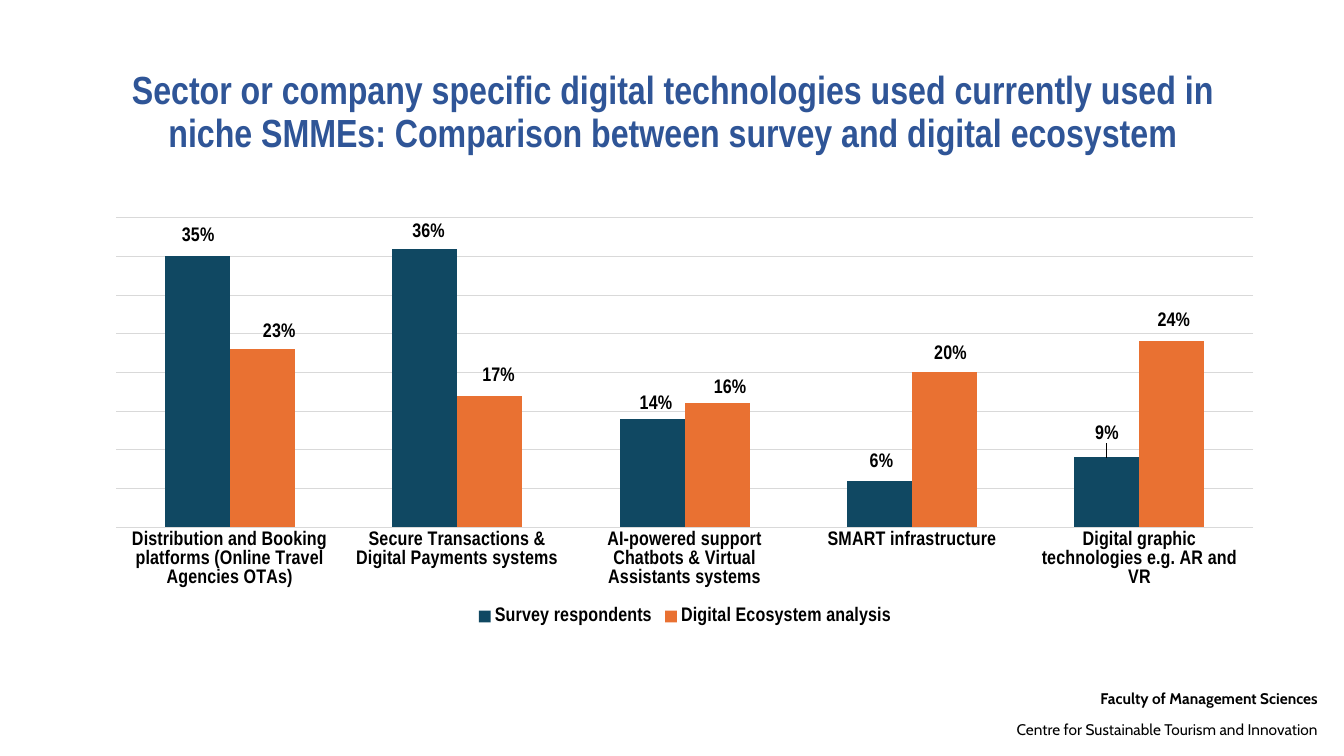
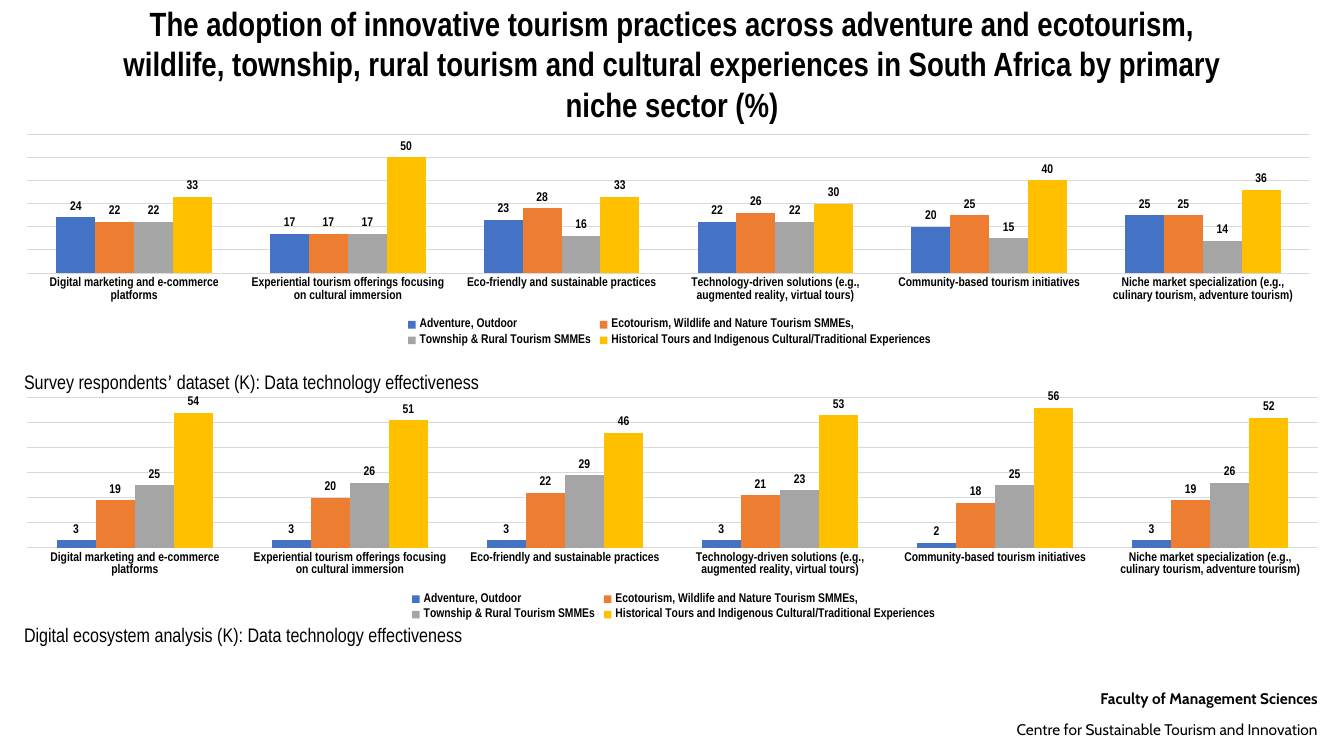
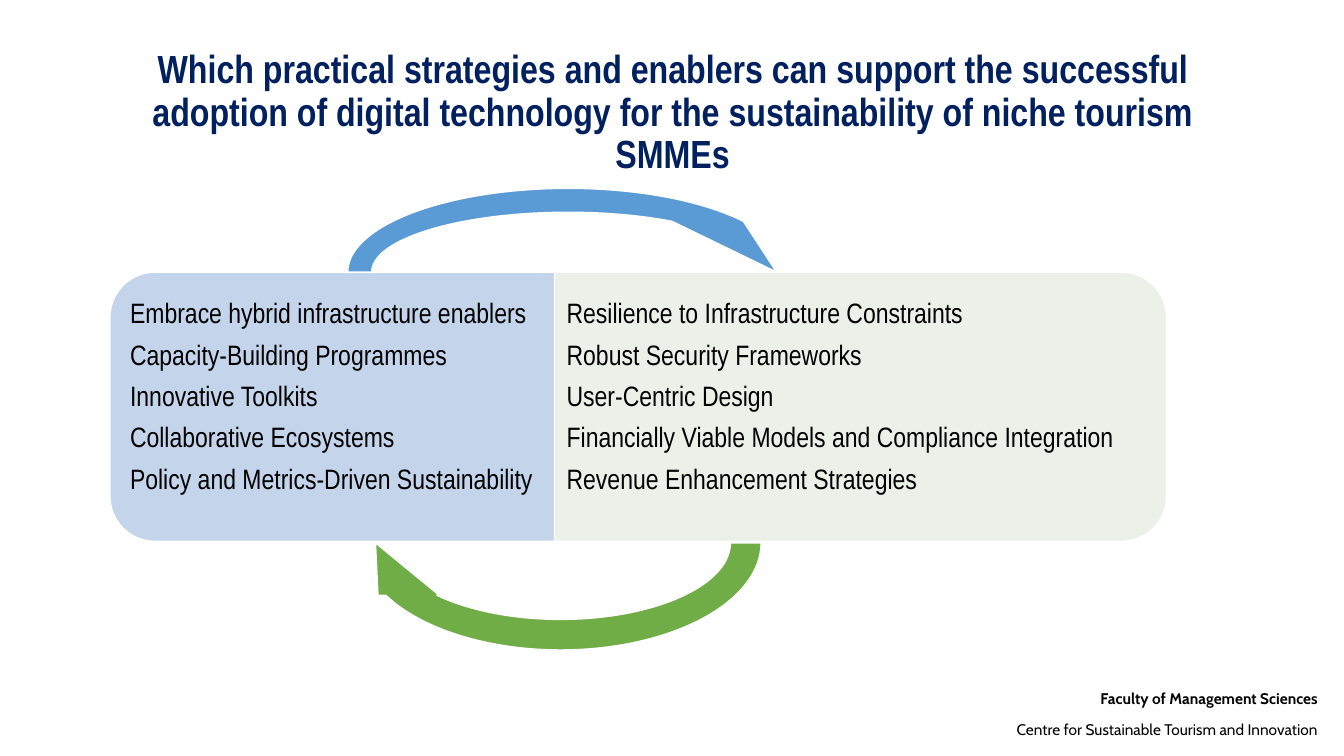
from lxml.etree import SubElement, Element
from pptx import Presentation
from pptx.chart.data import CategoryChartData
from pptx.dml.color import RGBColor
from pptx.enum.chart import XL_CHART_TYPE as Chart, XL_LABEL_POSITION as LabelAt
from pptx.enum.chart import XL_LEGEND_POSITION as LegendAt, XL_TICK_MARK as Tick
from pptx.enum.shapes import MSO_SHAPE as Shape
from pptx.enum.text import MSO_ANCHOR as Anchor, MSO_AUTO_SIZE as AutoSize, PP_ALIGN as Align
from pptx.oxml.ns import qn
from pptx.util import Emu, Pt

TITLE_ONLY, TWO_CONTENT = 5, 3


def px(*lengths):
    return [Emu(length * 9144) for length in lengths]


def rgb(color):
    return RGBColor.from_string(color)


def manual_layout(x, y, w=None, h=None, inner=False, at_edge=True):
    layout = Element(qn("c:layout"))
    manual = SubElement(layout, qn("c:manualLayout"))
    settings = [("layoutTarget", "inner" if inner else None),
                ("xMode", "edge" if at_edge else None),
                ("yMode", "edge" if at_edge else None),
                ("x", x), ("y", y), ("w", w), ("h", h)]
    for tag, value in settings:
        if value is not None:
            text = value if isinstance(value, str) else f"{value:.4f}"
            SubElement(manual, qn(f"c:{tag}"), val=text)
    return layout


class Deck:
    FONT, FOOTER_FONT = "Arial Narrow", "Cabin"
    BLACK, WHITE, GRID = "000000", "FFFFFF", "D9D9D9"
    TITLE_AT = (92, 40, 1150, 145)

    def __init__(self):
        self.prs = Presentation()
        self.prs.slide_width, self.prs.slide_height = px(1333, 750)
        self.slide = None

    def font(self, target, size, color=BLACK, bold=False, name=FONT):
        target.name, target.size, target.bold = name, Pt(size), bold
        target.color.rgb = rgb(color)

    def place(self, shape, at):
        shape.left, shape.top, shape.width, shape.height = px(*at)

    def frame(self, box, insets=(10, 5, 10, 5), anchor=Anchor.TOP):
        frame = box.text_frame
        frame.word_wrap, frame.auto_size = True, AutoSize.NONE
        frame.vertical_anchor = anchor
        (frame.margin_left, frame.margin_top,
         frame.margin_right, frame.margin_bottom) = px(*insets)
        return frame

    def add_slide(self, title, size=28, color=BLACK, at=TITLE_AT, side=10,
                  spacing=0.9, layout=TITLE_ONLY):
        self.slide = self.prs.slides.add_slide(self.prs.slide_layouts[layout])
        heading = self.slide.shapes.title
        self.place(heading, at)
        frame = self.frame(heading, (side, 5, side, 5), Anchor.MIDDLE)
        frame.text = title
        line = frame.paragraphs[0]
        line.alignment, line.line_spacing = Align.CENTER, spacing
        self.font(line.font, size, color, True)

    def master_footer(self, faculty, centre):
        box = self.slide.shapes.add_textbox(*px(567, 670, 750, 56))
        frame = self.frame(box)
        frame.text = f"{faculty}\n{centre}"
        for number, line in enumerate(frame.paragraphs):
            line.alignment, line.line_spacing = Align.RIGHT, 1.5
            if number:
                line.space_before = Pt(2)
            self.font(line.font, 11, bold=not number, name=self.FOOTER_FONT)
        self.prs.slide_master.shapes.element.append(box.element)

    def caption(self, top, *pieces):
        box = self.slide.shapes.add_textbox(*px(14, top, 520, 34))
        line = self.frame(box, anchor=Anchor.MIDDLE).paragraphs[0]
        self.font(line.font, 14)
        for piece in pieces:
            run = line.add_run()
            run.text = piece
            if piece == "’":
                run.font.name = "Calibri"

    def bullets(self, index, at, insets, items):
        holder = self.slide.placeholders[index]
        self.place(holder, at)
        frame = self.frame(holder, insets)
        frame.text = "\n".join(items)
        for line in frame.paragraphs:
            settings = line._p.get_or_add_pPr()
            settings.set("marL", "0")
            settings.set("indent", "0")
            SubElement(settings, qn("a:buNone"))
            line.alignment, line.line_spacing = Align.LEFT, 0.9
            line.space_before, line.space_after = Pt(0), Pt(8)
            self.font(line.font, 20)
        self.slide.shapes.element.append(holder.element)

    def shape(self, kind, at, fill, rotation, adjustments):
        shape = self.slide.shapes.add_shape(kind, *px(*at))
        shape.shadow.inherit = False
        shape.rotation = rotation
        for index, value in enumerate(adjustments):
            shape.adjustments[index] = value
        shape.fill.solid()
        shape.fill.fore_color.rgb = rgb(fill)
        shape.line.color.rgb, shape.line.width = rgb(self.WHITE), Pt(1)

    def columns(self, at, plot_at, categories, series, colors, size, top, step,
                number_format="0", legend_at=None, label_shifts=()):
        data = CategoryChartData(number_format=number_format)
        data.categories = categories
        for name, values in series.items():
            data.add_series(name, values)
        chart = self.slide.shapes.add_chart(Chart.COLUMN_CLUSTERED, *px(*at), data).chart
        chart.has_title = False
        self.font(chart.font, size, bold=True)
        left, upper, width, height = at

        def fractions(x, y, w, h):
            return (x - left) / width, (y - upper) / height, w / width, h / height

        area = chart._chartSpace.chart.plotArea
        for old in area.findall(qn("c:layout")):
            area.remove(old)
        area.insert(0, manual_layout(*fractions(*plot_at), inner=True))

        chart.has_legend = True
        legend = chart.legend
        legend.position, legend.include_in_layout = LegendAt.BOTTOM, False
        self.font(legend.font, size, bold=True)
        if legend_at:
            position = legend._element.find(qn("c:legendPos"))
            position.addnext(manual_layout(*fractions(*legend_at)))

        category, value = chart.category_axis, chart.value_axis
        category.major_tick_mark = category.minor_tick_mark = Tick.NONE
        category.format.line.fill.background()
        self.font(category.tick_labels.font, size, bold=True)
        value.visible = False
        value.minimum_scale, value.maximum_scale, value.major_unit = 0, top, step
        value.has_major_gridlines = True
        grid = value.major_gridlines.format.line
        grid.color.rgb, grid.width = rgb(self.GRID), Pt(0.75)

        plot = chart.plots[0]
        plot.gap_width, plot.overlap, plot.vary_by_categories = 150, 0, False
        for bars, color in zip(plot.series, colors):
            bars.format.fill.solid()
            bars.format.fill.fore_color.rgb = rgb(color)
            labels = bars.data_labels
            labels.show_value, labels.position = True, LabelAt.OUTSIDE_END
            labels.number_format, labels.number_format_is_linked = number_format, False
            self.font(labels.font, size, bold=True)
        for bars, shifts in zip(plot.series, label_shifts):
            for index, (dx, dy) in enumerate(shifts):
                label = bars.points[index].data_label
                self.font(label.font, size, bold=True)
                label.position = LabelAt.OUTSIDE_END
                entry = bars.data_labels._element.findall(qn("c:dLbl"))[index]
                entry.insert(1, manual_layout(dx / width, dy / height, at_edge=False))


def technologies(deck):
    deck.add_slide("Sector or company specific digital technologies used currently used in "
                   "niche SMMEs: Comparison between survey and digital ecosystem",
                   color="2F5597")
    deck.master_footer("Faculty of Management Sciences",
                       "Centre for Sustainable Tourism and Innovation")
    deck.columns(
        (92, 208, 1175, 417), (115, 216, 1128, 307),
        ["Distribution and Booking platforms (Online Travel Agencies OTAs)",
         "Secure Transactions & Digital Payments systems",
         "AI-powered support Chatbots & Virtual Assistants systems",
         "SMART infrastructure",
         "Digital graphic technologies e.g. AR and VR"],
        {"Survey respondents": [0.35, 0.36, 0.14, 0.06, 0.09],
         "Digital Ecosystem analysis": [0.23, 0.17, 0.16, 0.2, 0.24]},
        ["104862", "E97132"], 14, 0.4, 0.05, "0%",
        label_shifts=[[(1, -7), (4, -3), (4, -1), (2, -5), (0, -10)],
                      [(17, -4), (9, -6), (13, -2), (6, -5), (2, -7)]])


def adoption(deck):
    deck.add_slide("The adoption of innovative tourism practices across adventure and "
                   "ecotourism, wildlife, township, rural tourism and cultural experiences "
                   "in South Africa by primary niche sector (%)",
                   24, at=(0, 0, 1333, 126), side=100, spacing=1.0)
    deck.caption(362, "Survey respondents", "’",
                 " dataset (K): Data technology effectiveness")
    deck.caption(613, "Digital ecosystem analysis (K): Data technology effectiveness")
    practices = ["Digital marketing and e-commerce platforms",
                 "Experiential tourism offerings focusing on cultural immersion",
                 "Eco-friendly and sustainable practices",
                 "Technology-driven solutions (e.g., augmented reality, virtual tours)",
                 "Community-based tourism initiatives",
                 "Niche market specialization (e.g., culinary tourism, adventure tourism)"]
    sectors = ["Adventure, Outdoor",
               "Ecotourism, Wildlife and Nature Tourism SMMEs,",
               "Township & Rural Tourism SMMEs",
               "Historical Tours and Indigenous Cultural/Traditional Experiences"]
    colors = ["4472C4", "ED7D31", "A5A5A5", "FFC000"]
    survey = [[24, 17, 23, 22, 20, 25], [22, 17, 28, 26, 25, 25],
              [22, 17, 16, 22, 15, 14], [33, 50, 33, 30, 40, 36]]
    ecosystem = [[3, 3, 3, 3, 2, 3], [19, 20, 22, 21, 18, 19],
                 [25, 26, 29, 23, 25, 26], [54, 51, 46, 53, 56, 52]]
    for at, plot_at, legend_at, shares in [
            ((0, 129, 1325, 220), (27, 133, 1272, 138), (400, 313, 528, 34), survey),
            ((0, 388, 1333, 233), (27, 393, 1280, 150), (404, 585, 528, 34), ecosystem)]:
        deck.columns(at, plot_at, practices, dict(zip(sectors, shares)), colors,
                     9, 60, 10, legend_at=legend_at)


def strategies(deck):
    deck.add_slide("Which practical strategies and enablers can support the successful "
                   "adoption of digital technology for the sustainability of niche tourism "
                   "SMMEs", color="002060", layout=TWO_CONTENT)
    rounded_end = (0.167, 0)
    deck.shape(Shape.ROUND_2_SAME_RECTANGLE, (253, 126, 267, 555), "C4D5EB", 270, rounded_end)
    deck.bullets(1, (121, 283, 542, 241), (8, 14, 12, 14),
                 ["Embrace hybrid infrastructure enablers",
                  "Capacity-Building Programmes",
                  "Innovative Toolkits",
                  "Collaborative Ecosystems",
                  "Policy and Metrics-Driven Sustainability"])
    deck.shape(Shape.ROUND_2_SAME_RECTANGLE, (720, 100, 267, 607), "EBF1E9", 90, rounded_end)
    deck.bullets(2, (550, 283, 594, 241), (12, 14, 8, 14),
                 ["Resilience to Infrastructure Constraints",
                  "Robust Security Frameworks",
                  "User-Centric Design",
                  "Financially Viable Models and Compliance Integration",
                  "Revenue Enhancement Strategies"])
    half_turn = (0.125, 11.42, 204.58, 108, 0.125)
    deck.shape(Shape.CIRCULAR_ARROW, (333, 175, 461, 190), "5B9BD5", 0, half_turn)
    deck.shape(Shape.CIRCULAR_ARROW, (342, 417, 428, 243), "70AD47", 180, half_turn)


def main():
    deck = Deck()
    technologies(deck)
    adoption(deck)
    strategies(deck)
    deck.prs.save("out.pptx")


if __name__ == "__main__":
    main()
